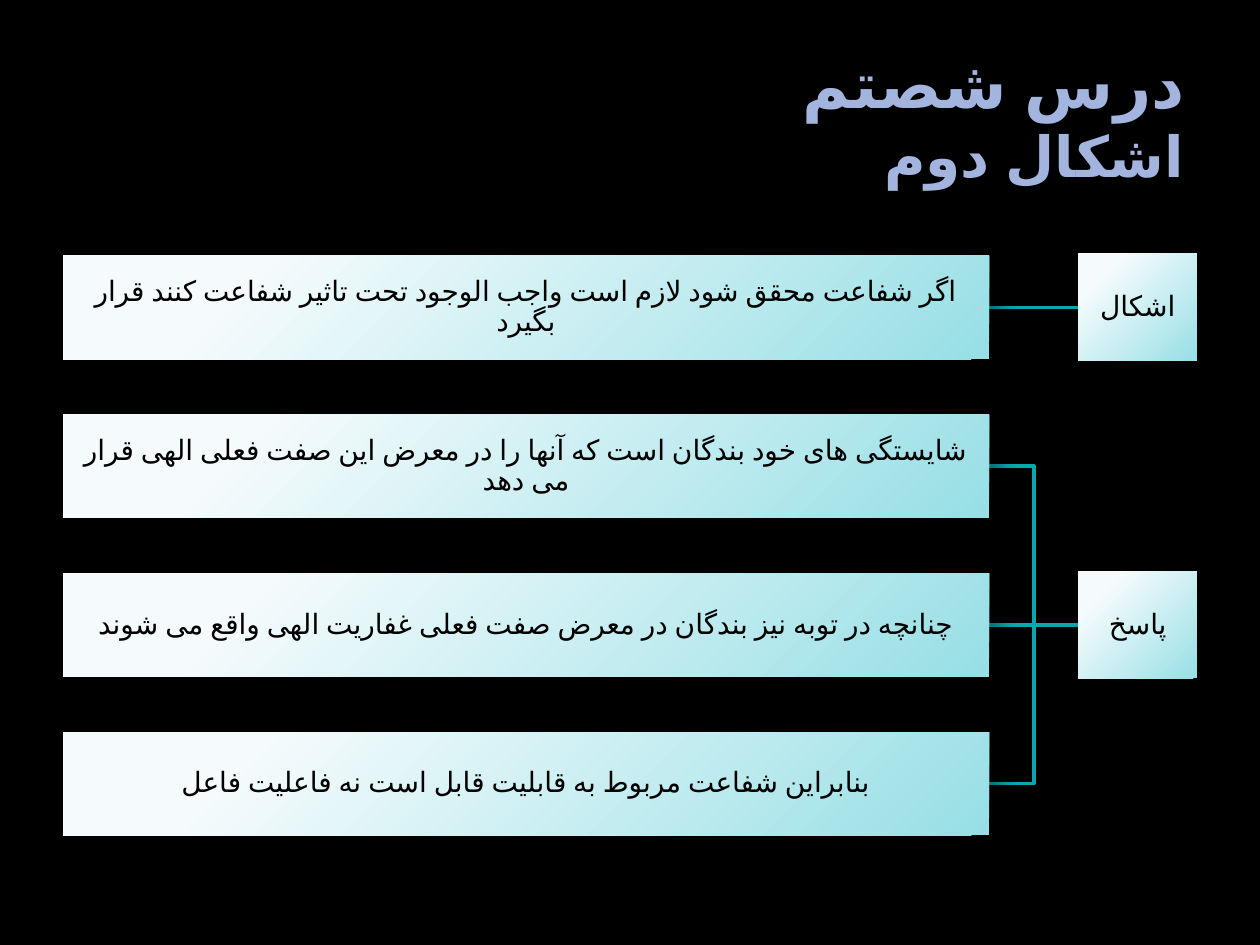
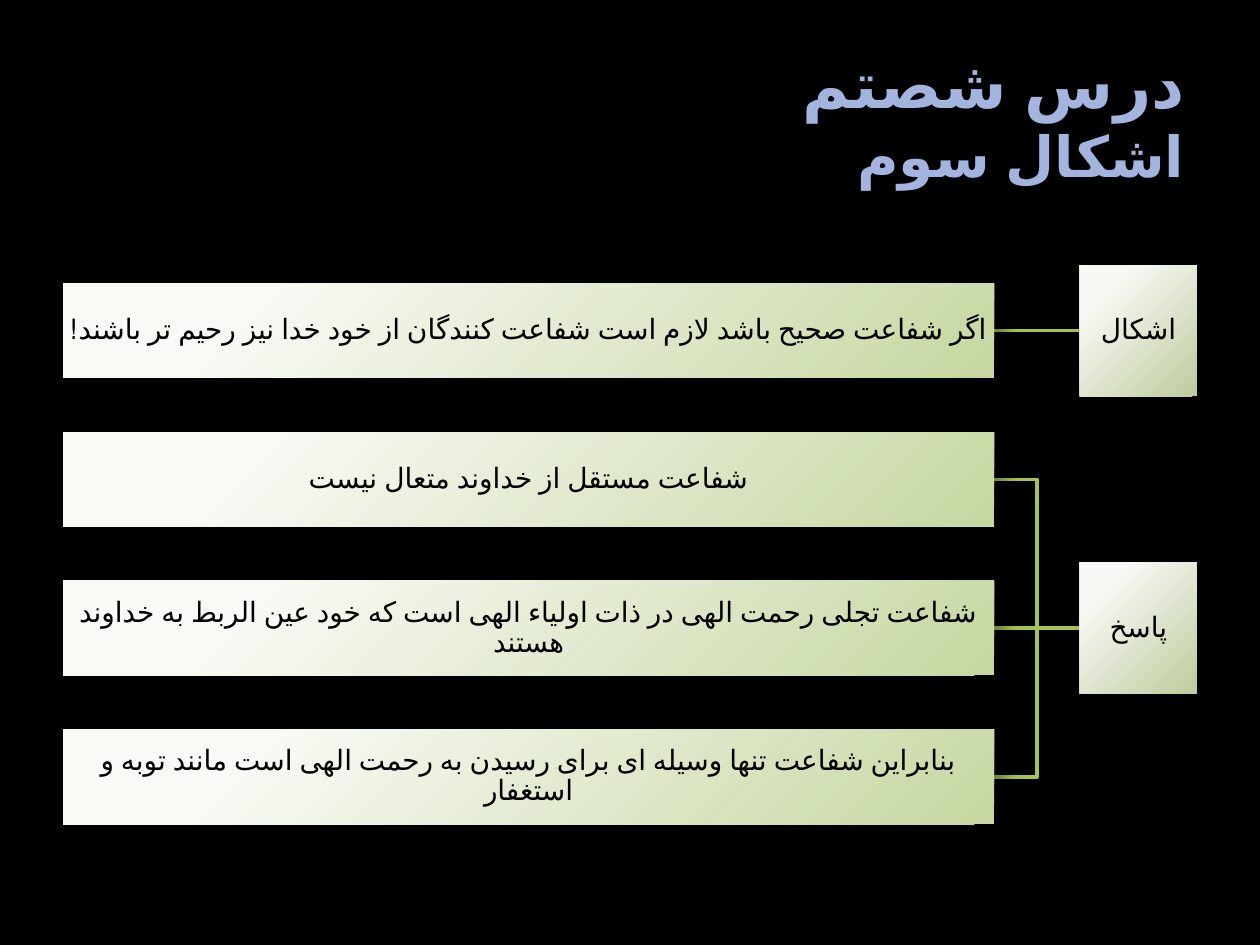
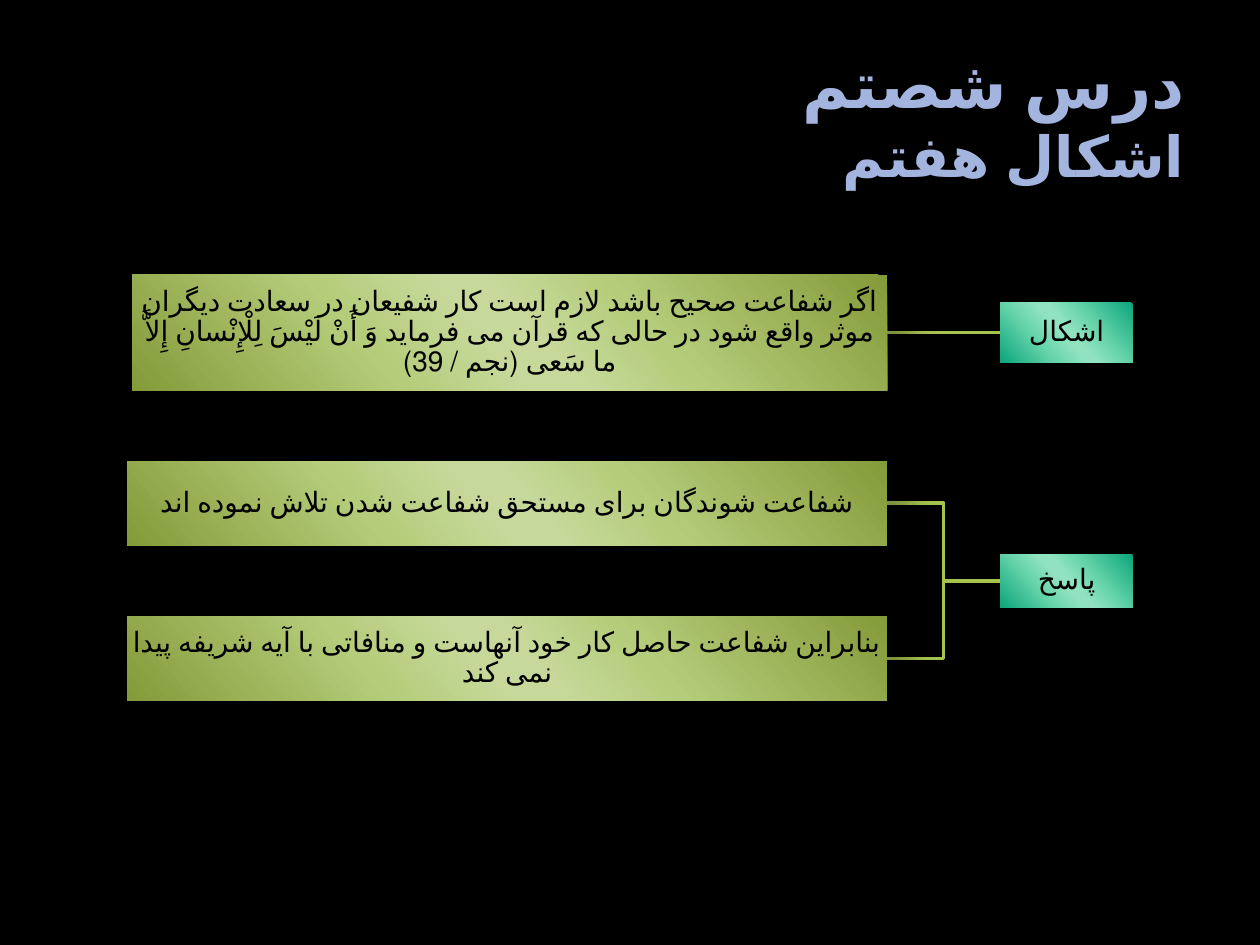
import pptx
import pptx.util
import pptx.oxml
import pptx.oxml.ns
import pptx.dml.color
import pptx.enum.lang
import pptx.enum.shapes
import pptx.enum.text

Inches, Pt = pptx.util.Inches, pptx.util.Pt
RGB = pptx.dml.color.RGBColor
qn = pptx.oxml.ns.qn
NS = pptx.oxml.ns.nsdecls("a")
PP_ALIGN = pptx.enum.text.PP_ALIGN
CONNECTOR = pptx.enum.shapes.MSO_CONNECTOR

BLACK = RGB(0x00, 0x00, 0x00)
TITLE_BLUE = RGB(0xA3, 0xB4, 0xDE)
TEAL = RGB(0x09, 0xA7, 0xAE)
LIME = RGB(0xA6, 0xC3, 0x4E)
ICE, AQUA = RGB(0xF5, 0xFB, 0xFC), RGB(0x97, 0xDF, 0xE5)
IVORY, SAGE = RGB(0xF8, 0xF9, 0xF5), RGB(0xBE, 0xCC, 0x9E)
CREAM, PISTACHIO = RGB(0xF9, 0xFA, 0xF5), RGB(0xC6, 0xD7, 0xA1)
JADE, MINT, PALE_MINT = RGB(0x0D, 0xA6, 0x7C), RGB(0x6B, 0xD6, 0xAD), RGB(0x91, 0xE3, 0xC0)
OLIVE, MOSS, PALE_MOSS = RGB(0x84, 0x9B, 0x3A), RGB(0xB5, 0xCC, 0x7A), RGB(0xC6, 0xD9, 0x9A)

LESSON = "درس شصتم"
LABELS = ("اشکال", "پاسخ")
CORNER = ('<a:path path="circle"><a:fillToRect l="-15000" t="-15000" '
          'r="115000" b="115000"/></a:path>')
DIAGONAL = '<a:lin ang="8340000" scaled="0"/>'
SOFT_SHADOW = dict(alpha=35, blur=10.2, dist=8)
DEEP_SHADOW = dict(alpha=26, blur=15, dist=18)


def glow(light, dark):
    return [(20, light), (100, dark)], CORNER


def sheen(edge, middle, center):
    stops = zip((0, 33, 47, 53, 68, 100), (edge, middle, center, center, middle, edge))
    return list(stops), DIAGONAL


# The first bar is the objection, the others are the answer to it.
SLIDES = [
    dict(
        title="اشکال دوم",
        bars=[
            "اگر شفاعت محقق شود لازم است واجب الوجود تحت تاثیر شفاعت کنند قرار بگیرد",
            "شایستگی های خود بندگان است که آنها را در معرض این صفت فعلی الهی قرار می دهد",
            "چنانچه در توبه نیز بندگان در معرض صفت فعلی غفاریت الهی واقع می شوند",
            "بنابراین شفاعت مربوط به قابلیت قابل است نه فاعلیت فاعل",
        ],
        bar_sizes=[(7.35, 0.82)] * 4, bar_right=7.85, top=2.03, gap=0.44,
        label_left=8.56, label_sizes=[(0.94, 0.85)] * 2,
        label_fill=glow(ICE, AQUA), bar_fill=glow(ICE, AQUA),
        line=TEAL, shadow=SOFT_SHADOW,
    ),
    dict(
        title="اشکال سوم",
        bars=[
            "اگر شفاعت صحیح باشد لازم است شفاعت کنندگان از خود خدا نیز رحیم تر باشند!",
            "شفاعت مستقل از خداوند متعال نیست",
            "شفاعت تجلی رحمت الهی در ذات اولیاء الهی است که خود عین الربط به خداوند هستند",
            "بنابراین شفاعت تنها وسیله ای برای رسیدن به رحمت الهی است مانند توبه و استغفار",
        ],
        bar_sizes=[(7.39, 0.75)] * 4, bar_right=7.89, top=2.25, gap=0.43,
        label_left=8.57, label_sizes=[(0.93, 1.04)] * 2,
        label_fill=glow(IVORY, SAGE), bar_fill=glow(CREAM, PISTACHIO),
        line=LIME, shadow=SOFT_SHADOW,
    ),
    dict(
        title="اشکال هفتم",
        bars=[
            "اگر شفاعت صحیح باشد لازم است کار شفیعان در سعادت دیگران موثر واقع شود "
            "در حالی که قرآن می فرماید وَ أَنْ لَيْسَ لِلْإِنْسانِ إِلاَّ ما سَعى (نجم / 39)",
            "شفاعت شوندگان برای مستحق شفاعت شدن تلاش نموده اند",
            "بنابراین شفاعت حاصل کار خود آنهاست و منافاتی با آیه شریفه پیدا نمی کند",
        ],
        bar_sizes=[(5.99, 0.92), (6.03, 0.67), (6.03, 0.67)],
        bar_right=7.04, top=2.18, gap=0.56,
        label_left=7.94, label_sizes=[(1.05, 0.47), (1.05, 0.42)],
        label_fill=sheen(JADE, MINT, PALE_MINT), bar_fill=sheen(OLIVE, MOSS, PALE_MOSS),
        line=LIME, shadow=DEEP_SHADOW,
    ),
]


def set_rtl(p, align):
    p.alignment = align
    p._p.get_or_add_pPr().set("rtl", "1")


def style(r, name, size, color):
    font = r.font
    font.name = name
    font.size = Pt(size)
    font.color.rgb = color
    font.language_id = pptx.enum.lang.MSO_LANGUAGE_ID.FARSI


def add_title(s, text):
    sp = s.shapes.add_textbox(Inches(0.5), Inches(0.3), Inches(9), Inches(1.25))
    tf = sp.text_frame
    tf.word_wrap = True
    tf.vertical_anchor = pptx.enum.text.MSO_ANCHOR.MIDDLE
    tf.text = f"{LESSON}\v{text}"
    p = tf.paragraphs[0]
    set_rtl(p, PP_ALIGN.RIGHT)
    for r, size in zip(p.runs, (36.9, 32.4)):
        style(r, "Noto Sans", size, TITLE_BLUE)
        r.font.bold = True


def paint(sp, fill, shadow):
    """Give a shape a gradient fill, no outline and a diagonal shadow."""
    stops, direction = fill
    gs = "".join(f'<a:gs pos="{pos * 1000}"><a:srgbClr val="{color}"/></a:gs>'
                 for pos, color in stops)
    sp.fill.gradient()
    spPr = sp._element.spPr
    spPr.replace(spPr.find(qn("a:gradFill")), pptx.oxml.parse_xml(
        f'<a:gradFill {NS} rotWithShape="1"><a:gsLst>{gs}</a:gsLst>{direction}</a:gradFill>'))
    sp.line.fill.background()
    sp.shadow.inherit = False
    spPr.find(qn("a:effectLst")).append(pptx.oxml.parse_xml(
        f'<a:outerShdw {NS} blurRad="{Pt(shadow["blur"])}" dist="{Pt(shadow["dist"])}" '
        f'dir="2700000" algn="tl" rotWithShape="0"><a:srgbClr val="{BLACK}">'
        f'<a:alpha val="{shadow["alpha"] * 1000}"/></a:srgbClr></a:outerShdw>'))


def add_box(s, text, left, center, size, fill, shadow):
    width, height = size
    sp = s.shapes.add_shape(pptx.enum.shapes.MSO_SHAPE.RECTANGLE, Inches(left),
                            Inches(center - height / 2), Inches(width), Inches(height))
    paint(sp, fill, shadow)
    tf = sp.text_frame
    tf.word_wrap = True
    tf.vertical_anchor = pptx.enum.text.MSO_ANCHOR.MIDDLE
    tf.margin_left = tf.margin_right = tf.margin_top = tf.margin_bottom = Inches(0.01)
    tf.text = text
    p = tf.paragraphs[0]
    set_rtl(p, PP_ALIGN.CENTER)
    p.line_spacing = 0.9
    style(p.runs[0], "Cambria", 16, BLACK)
    return sp


def join(s, label, bar, level, color):
    """Connect a label to a bar, behind all boxes."""
    kind = CONNECTOR.STRAIGHT if level else CONNECTOR.ELBOW
    c = s.shapes.add_connector(kind, 0, 0, 0, 0)
    c.begin_connect(label, 1)
    c.end_connect(bar, 3)
    c.line.color.rgb = color
    c.line.width = Pt(2)
    c._element.spPr.append(pptx.oxml.parse_xml(f"<a:effectLst {NS}/>"))
    s.shapes[0]._element.addprevious(c._element)


def add_tree(s, d):
    centers, y = [], d["top"]
    for _, height in d["bar_sizes"]:
        centers.append(y + height / 2)
        y += height + d["gap"]
    label_centers = (centers[0], (centers[1] + centers[-1]) / 2)

    labels = [add_box(s, text, d["label_left"], center, size, d["label_fill"], d["shadow"])
              for text, center, size in zip(LABELS, label_centers, d["label_sizes"])]
    bars = [add_box(s, text, d["bar_right"] - size[0], center, size, d["bar_fill"], d["shadow"])
            for text, center, size in zip(d["bars"], centers, d["bar_sizes"])]
    for i, bar in enumerate(bars):
        branch = min(i, 1)
        level = abs(centers[i] - label_centers[branch]) < 0.01
        join(s, labels[branch], bar, level, d["line"])


def main():
    prs = pptx.Presentation()
    prs.slide_width, prs.slide_height = Inches(10), Inches(7.5)
    for d in SLIDES:
        s = prs.slides.add_slide(prs.slide_layouts[6])
        s.background.fill.solid()
        s.background.fill.fore_color.rgb = BLACK
        add_title(s, d["title"])
        add_tree(s, d)
    prs.save("out.pptx")


if __name__ == "__main__":
    main()
